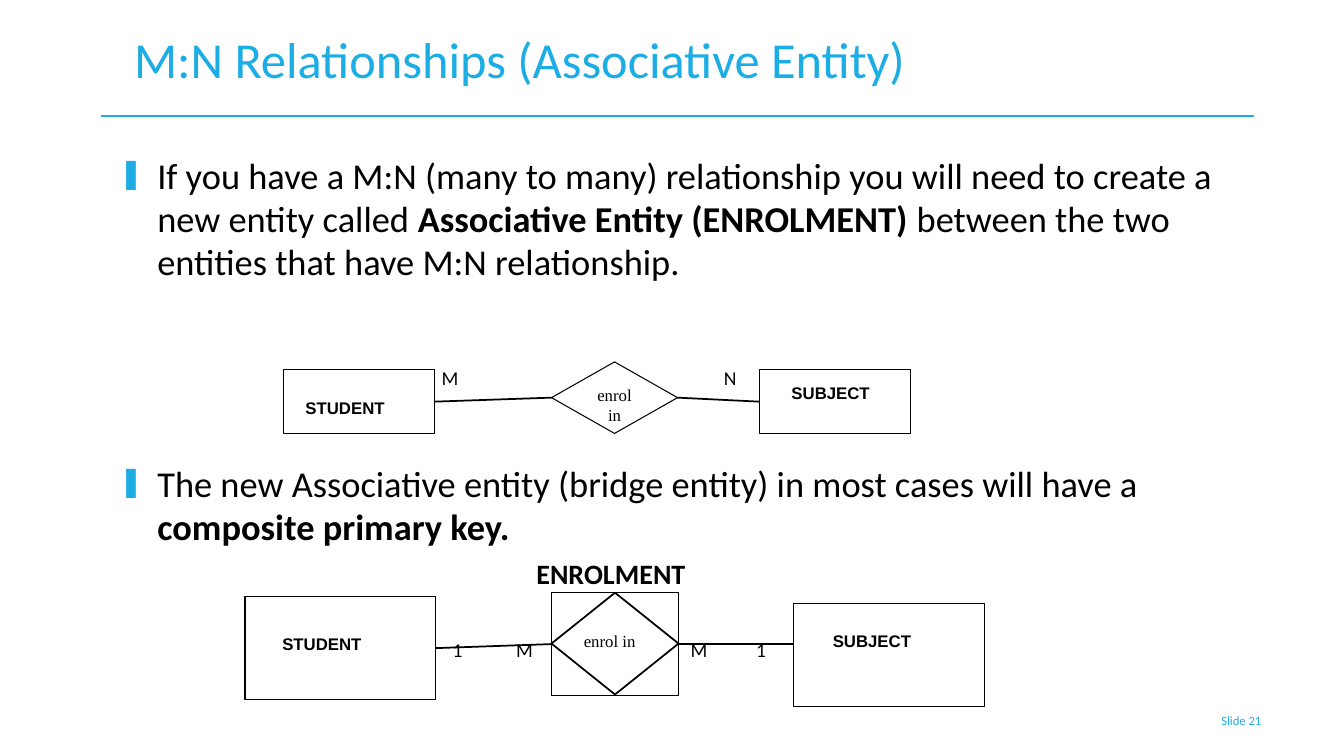
from dataclasses import dataclass

import pptx
import pptx.dml.color
import pptx.enum.shapes
import pptx.enum.text
import pptx.oxml
import pptx.oxml.ns
import pptx.util

Inches = pptx.util.Inches
Pt = pptx.util.Pt
SHAPE = pptx.enum.shapes.MSO_SHAPE
ANCHOR = pptx.enum.text.MSO_ANCHOR
ALIGN = pptx.enum.text.PP_ALIGN

ACCENT = "1CADE4"
BLACK = "000000"
WHITE = "FFFFFF"
LEFT_SIDE, RIGHT_SIDE = 1, 3
LABEL_HEIGHT = 0.3


@dataclass
class Node:
    left: float
    top: float
    width: float
    height: float
    kind: SHAPE = SHAPE.RECTANGLE
    line_width: float = 0.75


@dataclass
class Label:
    text: str
    left: float
    middle: float
    font: str = "Calibri"
    size: float = 14
    bold: bool = False


@dataclass
class Bullet:
    top: float
    height: float
    phrases: list[tuple[str, bool]]


def rgb(value: str) -> pptx.dml.color.RGBColor:
    return pptx.dml.color.RGBColor.from_string(value)


def style_font(font, name: str, size: float, color: str, bold: bool = False) -> None:
    font.name = name
    font.size = Pt(size)
    font.bold = bold
    font.color.rgb = rgb(color)


def add_text_frame(slide, left: float, top: float, width: float, height: float):
    """Add a text box without margins and return its text frame."""
    frame = slide.shapes.add_textbox(
        Inches(left), Inches(top), Inches(width), Inches(height)).text_frame
    frame.margin_left = frame.margin_right = frame.margin_top = frame.margin_bottom = 0
    frame.word_wrap = True
    return frame


def add_label(slide, label: Label) -> None:
    frame = add_text_frame(
        slide, label.left, label.middle - LABEL_HEIGHT / 2, 1.7, LABEL_HEIGHT)
    frame.vertical_anchor = ANCHOR.MIDDLE
    frame.text = label.text
    style_font(frame.paragraphs[0].runs[0].font, label.font, label.size, BLACK, label.bold)


def add_node(slide, node: Node):
    shape = slide.shapes.add_shape(
        node.kind, Inches(node.left), Inches(node.top),
        Inches(node.width), Inches(node.height))
    shape.shadow.inherit = False
    shape.fill.background()
    shape.line.color.rgb = rgb(BLACK)
    shape.line.width = Pt(node.line_width)
    return shape


def add_line(slide, start: tuple[float, float], end: tuple[float, float],
             color: str, width: float):
    line = slide.shapes.add_connector(
        pptx.enum.shapes.MSO_CONNECTOR.STRAIGHT,
        Inches(start[0]), Inches(start[1]), Inches(end[0]), Inches(end[1]))
    line.line.color.rgb = rgb(color)
    line.line.width = Pt(width)
    line._element.spPr.append(pptx.oxml.parse_xml(
        f'<a:effectLst {pptx.oxml.ns.nsdecls("a")}/>'))
    return line


def add_bullet(slide, bullet: Bullet) -> None:
    frame = add_text_frame(slide, 1.18, bullet.top, 11.22, bullet.height)
    paragraph = frame.paragraphs[0]
    paragraph.line_spacing = 0.98
    for text, bold in bullet.phrases:
        run = paragraph.add_run()
        run.text = text
        style_font(run.font, "Calibri", 26, BLACK, bold)
    properties = paragraph._p.get_or_add_pPr()
    properties.set("marL", str(Inches(0.38)))
    properties.set("indent", str(Inches(-0.38)))
    namespace = pptx.oxml.ns.nsdecls("a")
    for markup in (
        f'<a:buClr {namespace}><a:srgbClr val="{ACCENT}"/></a:buClr>',
        f'<a:buSzPct {namespace} val="80000"/>',
        f'<a:buChar {namespace} char="❚"/>',
    ):
        properties.append(pptx.oxml.parse_xml(markup))


BULLETS = [
    Bullet(1.54, 1.35, [
        ("If you have a M:N (many to many) relationship you will need to create a "
         "new entity called ", False),
        ("Associative Entity (ENROLMENT) ", True),
        ("between the two entities that have M:N relationship.", False)]),
    Bullet(4.6, 0.9, [
        ("The new Associative entity (bridge entity) in most cases will have a ", False),
        ("composite primary key.", True)]),
]

LABELS = [
    Label("M", 4.38, 3.75),
    Label("N", 7.18, 3.75),
    Label("ENROLMENT", 5.32, 5.69, size=20, bold=True),
    Label("1", 4.49, 6.45),
    Label("M", 5.12, 6.45),
    Label("M", 6.85, 6.45),
    Label("1", 7.5, 6.45),
    Label("STUDENT", 3.03, 4.05, "Arial", 12, True),
    Label("SUBJECT", 7.85, 3.9, "Arial", 12, True),
    Label("STUDENT", 2.8, 6.39, "Arial", 12, True),
    Label("SUBJECT", 8.26, 6.36, "Arial", 12, True),
    Label("enrol in", 5.79, 6.36, "Times New Roman", 12),
]


def main() -> None:
    deck = pptx.Presentation()
    deck.slide_width = Inches(13.33)
    deck.slide_height = Inches(7.5)
    slide = deck.slides.add_slide(deck.slide_layouts[6])

    add_line(slide, (1, 1.15), (12.44, 1.15), ACCENT, 1)
    title = add_text_frame(slide, 1.33, 0.28, 9.38, 0.7)
    title.text = "M:N Relationships (Associative Entity)"
    style_font(title.paragraphs[0].runs[0].font, "Calibri", 36, ACCENT)

    for bullet in BULLETS:
        add_bullet(slide, bullet)

    student = add_node(slide, Node(2.81, 3.67, 1.5, 0.63))
    subject = add_node(slide, Node(7.53, 3.67, 1.5, 0.63))
    enrol = add_node(slide, Node(5.47, 3.59, 1.25, 0.71, SHAPE.DIAMOND))
    enrol.fill.solid()
    enrol.fill.fore_color.rgb = rgb(WHITE)
    enrol.text_frame.text = "enrol in"
    enrol.text_frame.vertical_anchor = ANCHOR.TOP
    enrol.text_frame.paragraphs[0].alignment = ALIGN.CENTER
    style_font(enrol.text_frame.paragraphs[0].runs[0].font, "Times New Roman", 12, BLACK)

    new_student = add_node(slide, Node(2.43, 5.92, 1.89, 1.02))
    add_node(slide, Node(7.87, 5.99, 1.89, 1.02))
    add_node(slide, Node(5.47, 5.88, 1.26, 1.01, SHAPE.DIAMOND, 1.25))
    enrolment = add_node(slide, Node(5.47, 5.88, 1.26, 1.02))

    for start, end, left, right, y in (
        (student, enrol, 4.31, 5.47, 3.95),
        (enrol, subject, 6.72, 7.53, 3.96),
        (new_student, enrolment, 4.32, 5.47, 6.4),
        (enrolment, None, 6.73, 7.87, 6.39),
    ):
        link = add_line(slide, (left, y), (right, y), BLACK, 1.25)
        link.begin_connect(start, RIGHT_SIDE)
        if end is not None:
            link.end_connect(end, LEFT_SIDE)

    for label in LABELS:
        add_label(slide, label)

    slide_number = add_text_frame(slide, 11.69, 6.95, 0.82, 0.4)
    slide_number.vertical_anchor = ANCHOR.MIDDLE
    slide_number.text = "Slide 21"
    slide_number.paragraphs[0].alignment = ALIGN.RIGHT
    style_font(slide_number.paragraphs[0].runs[0].font, "Calibri", 9, ACCENT)

    deck.save("out.pptx")


if __name__ == "__main__":
    main()
